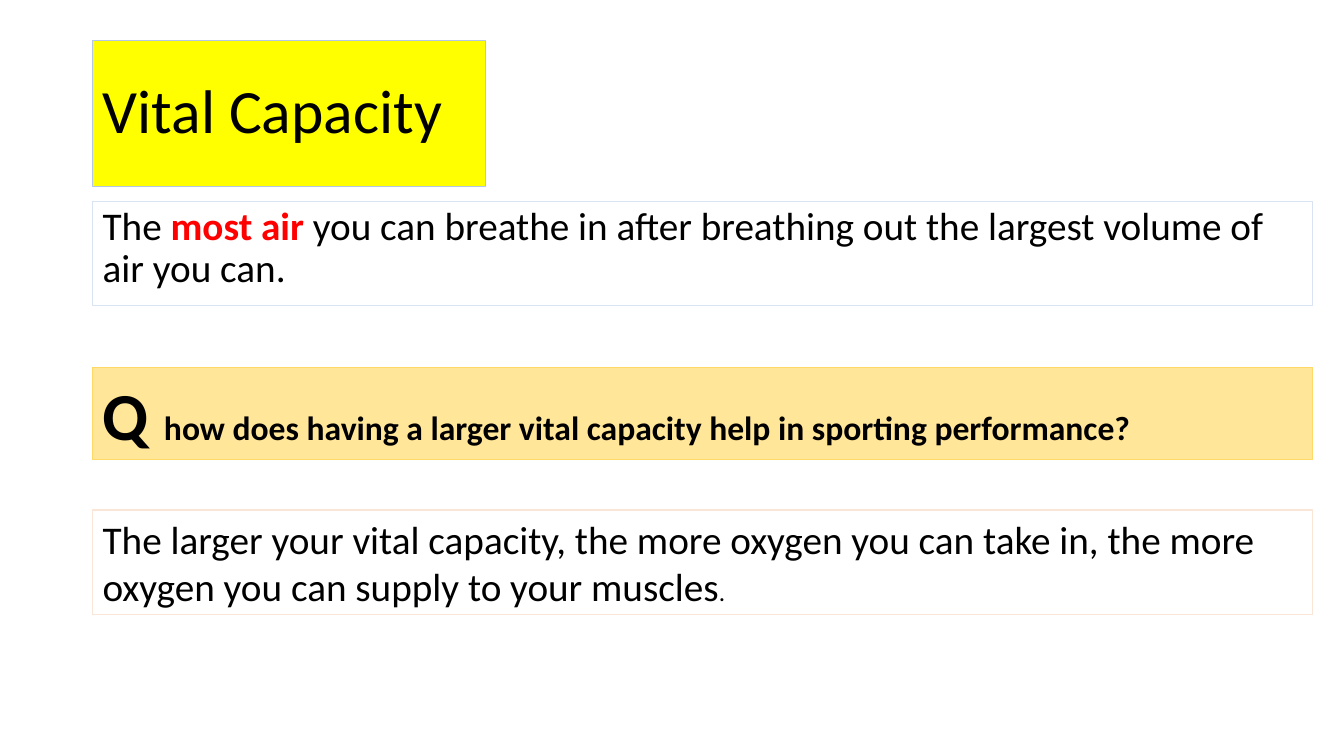
from pptx import Presentation
from pptx.dml.color import RGBColor as RGB
from pptx.enum.shapes import MSO_SHAPE as Shape
from pptx.enum.text import MSO_ANCHOR as Anchor, PP_ALIGN as Align
from pptx.util import Inches, Pt

theme = {
    "font": "Calibri",
    "ink": "000000", "red": "FF0000",
    "yellow": "FFFF00", "gold": "FFE699",
    "blue edge": "B4C7E7", "pale edge": "DAE3F3",
    "gold edge": "FFD966", "peach edge": "FBE5D6",
    "title": 44, "mark": 48, "body": 28, "ask": 24, "dot": 18,
}

left, wide = 0.92, 12.1
top, mid = Anchor.TOP, Anchor.MIDDLE
tight = {"line_spacing": 0.9, "space_before": Pt(0)}
loose = {"line_spacing": 0.9, "space_before": Pt(10)}

boxes = [
    (0.4, 3.9, 1.45, "yellow", "blue edge", mid, tight,
     [("Vital Capacity", "title", "ink", False)]),
    (2, wide, 1.03, None, "pale edge", top, loose,
     [("The ", "body", "ink", False),
      ("most air", "body", "red", True),
      (" you can breathe in after breathing out the largest volume of air you can.",
       "body", "ink", False)]),
    (3.65, wide, 0.91, "gold", "gold edge", top, {},
     [("Q ", "mark", "ink", True),
      ("how does having a larger vital capacity help in sporting performance?",
       "ask", "ink", True)]),
    (5.06, wide, 1.04, None, "peach edge", top, {},
     [("The larger your vital capacity, the more oxygen you can take in, "
       "the more oxygen you can supply to your muscles", "body", "ink", False),
      (".", "dot", "ink", False)]),
]

deck = Presentation()
deck.slide_width, deck.slide_height = Inches(13.33), Inches(7.5)
slide = deck.slides.add_slide(deck.slide_layouts[6])

for y, width, high, fill, edge, anchor, gaps, runs in boxes:
    box = slide.shapes.add_shape(
        Shape.RECTANGLE, Inches(left), Inches(y), Inches(width), Inches(high))
    box.shadow.inherit = False
    if fill:
        box.fill.solid()
        box.fill.fore_color.rgb = RGB.from_string(theme[fill])
    else:
        box.fill.background()
    box.line.color.rgb = RGB.from_string(theme[edge])
    box.line.width = Pt(0.75)
    frame = box.text_frame
    frame.word_wrap = True
    frame.vertical_anchor = anchor
    para = frame.paragraphs[0]
    for key, value in {"alignment": Align.LEFT, **gaps}.items():
        setattr(para, key, value)
    for text, size, ink, bold in runs:
        run = para.add_run()
        run.text = text
        run.font.color.rgb = RGB.from_string(theme[ink])
        look = {"name": theme["font"], "size": Pt(theme[size]), "bold": bold}
        for key, value in look.items():
            setattr(run.font, key, value)

deck.save("out.pptx")
